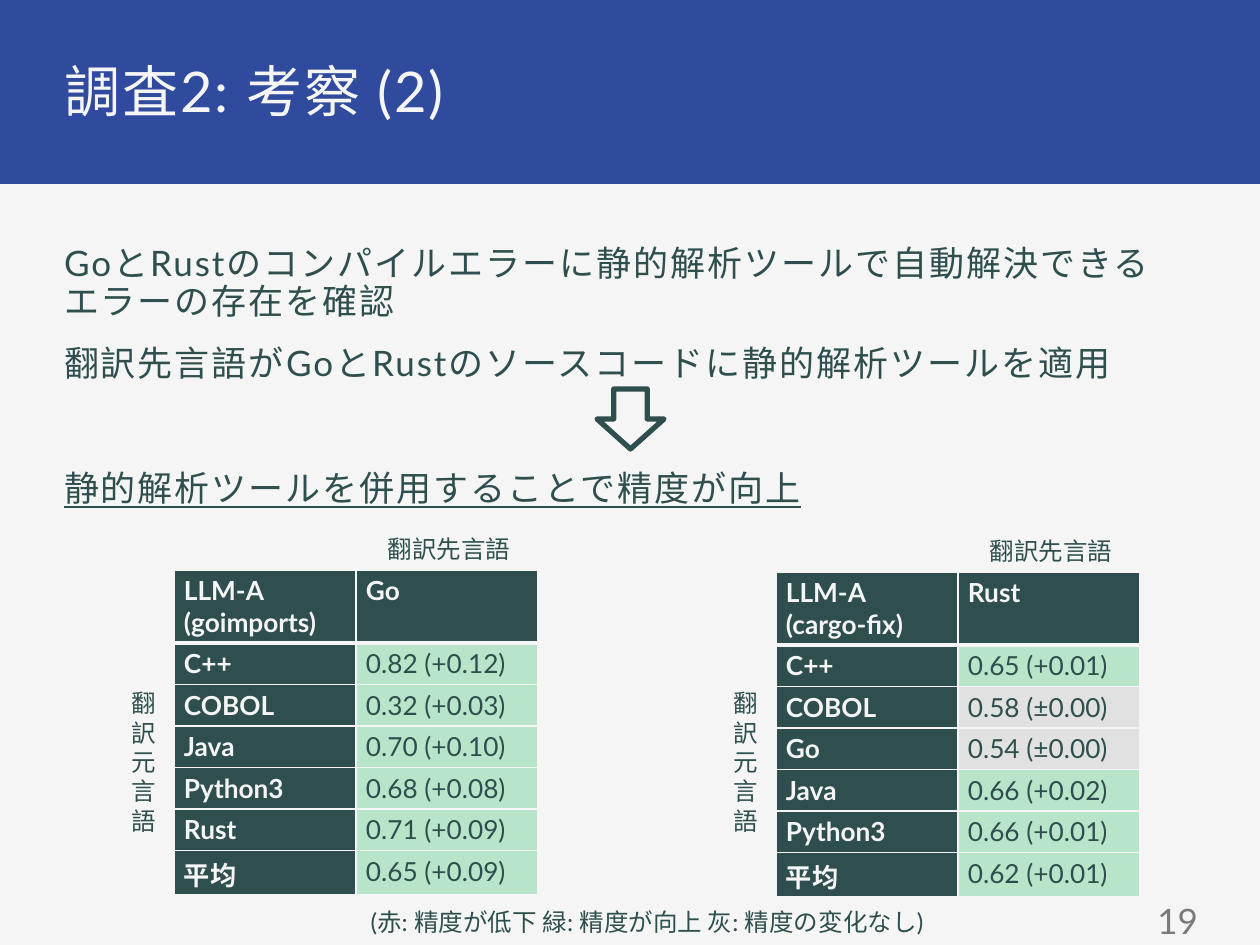
from lxml import etree
from pptx import Presentation
from pptx.dml.color import RGBColor
from pptx.enum.shapes import MSO_SHAPE
from pptx.enum.text import MSO_ANCHOR, MSO_AUTO_SIZE, PP_ALIGN
from pptx.oxml.ns import qn
from pptx.util import Emu, Pt

EMU_PER_PX = 914400 // 126
FONT = "Lato"
BLUE, PALE, DARK = "304A9E", "F5F5F5", "2F4F4F"
GREEN, GREY, PAGE_GREY = "B8E4C9", "E1E1E1", "7A7A7A"
LEFT, CENTER, RIGHT, JUSTIFY = PP_ALIGN.LEFT, PP_ALIGN.CENTER, PP_ALIGN.RIGHT, PP_ALIGN.JUSTIFY
TOP, MIDDLE = MSO_ANCHOR.TOP, MSO_ANCHOR.MIDDLE
NO_AUTOFIT = MSO_AUTO_SIZE.NONE
RECTANGLE, DOWN_ARROW = MSO_SHAPE.RECTANGLE, MSO_SHAPE.DOWN_ARROW

TITLE = "調査2: 考察 (2)"
POINTS = [
    ("GoとRustのコンパイルエラーに静的解析ツールで自動解決できる\nエラーの存在を確認", 14, False),
    ("翻訳先言語がGoとRustのソースコードに静的解析ツールを適用", 14, False),
    ("静的解析ツールを併用することで精度が向上", 50, True),
]
GO_ROWS = [
    ("LLM-A\n(goimports)", "Go"),
    ("C++", "0.82 (+0.12)"),
    ("COBOL", "0.32 (+0.03)"),
    ("Java", "0.70 (+0.10)"),
    ("Python3", "0.68 (+0.08)"),
    ("Rust", "0.71 (+0.09)"),
    ("平均", "0.65 (+0.09)"),
]
RUST_ROWS = [
    ("LLM-A\n(cargo-fix)", "Rust"),
    ("C++", "0.65 (+0.01)"),
    ("COBOL", "0.58 (±0.00)"),
    ("Go", "0.54 (±0.00)"),
    ("Java", "0.66 (+0.02)"),
    ("Python3", "0.66 (+0.01)"),
    ("平均", "0.62 (+0.01)"),
]
ROW_HEIGHTS = [70, 41, 41, 41, 41, 41, 44]


def px(length):
    """Turn pixels into EMU."""
    return Emu(length * EMU_PER_PX)


def color(code):
    """Turn a hex string into a colour."""
    return RGBColor.from_string(code)


def set_font(para, size, code, bold=False):
    """Set the font of a whole paragraph."""
    para.font.name = FONT
    para.font.size = Pt(size)
    para.font.bold = bold
    para.font.color.rgb = color(code)


def set_margins(target, across, down):
    """Set equal side margins and equal top and bottom margins."""
    target.margin_left = target.margin_right = px(across)
    target.margin_top = target.margin_bottom = px(down)


def place(shape, left, top, width, height):
    """Move and size a placeholder, and fix its text frame."""
    shape.left, shape.top, shape.width, shape.height = map(px, (left, top, width, height))
    frame = shape.text_frame
    frame.word_wrap = True
    frame.auto_size = NO_AUTOFIT
    frame.vertical_anchor = TOP
    return frame


def space_text(para, before):
    """Set the line and letter spacing that title and body share."""
    para.line_spacing = 0.9
    para.space_before = Pt(before)
    para._p.pPr.defRPr.set("spc", "110")


def fill_title(shape):
    """Write the slide title."""
    frame = place(shape, 54, 54, 1150, 74)
    set_margins(frame, 10, 10)
    para = frame.paragraphs[0]
    para.text = TITLE
    para.alignment = JUSTIFY
    set_font(para, 32, PALE)
    space_text(para, 16)


def fill_body(shape):
    """Write the unbulleted points."""
    frame = place(shape, 54, 238, 1150, 653)
    set_margins(frame, 10, 8)
    for number, (text, before, underline) in enumerate(POINTS):
        para = frame.add_paragraph() if number else frame.paragraphs[0]
        para.text = text
        properties = para._p.get_or_add_pPr()
        properties.set("marL", "0")
        properties.set("indent", "0")
        etree.SubElement(properties, qn("a:buNone"))
        set_font(para, 20, DARK)
        para.font.underline = underline
        space_text(para, before)


def add_label(slide, text, left, top, width, height, align=CENTER, size=14, code=DARK, anchor=TOP):
    """Add a one-paragraph text box."""
    box = slide.shapes.add_textbox(*map(px, (left, top, width, height)))
    frame = box.text_frame
    frame.word_wrap = True
    frame.vertical_anchor = anchor
    para = frame.paragraphs[0]
    para.text = text
    para.alignment = align
    set_font(para, size, code)
    return frame


def add_shape(slide, kind, left, top, width, height):
    """Add a preset shape without a shadow."""
    shape = slide.shapes.add_shape(kind, *map(px, (left, top, width, height)))
    shape.shadow.inherit = False
    return shape


def add_band(slide):
    """Add the title band behind everything else."""
    band = add_shape(slide, RECTANGLE, -2, -2, 1265, 186)
    band.fill.solid()
    band.fill.fore_color.rgb = color(BLUE)
    band.line.fill.background()
    slide.shapes._spTree.insert(2, band._element)


def add_arrow(slide):
    """Add the outlined arrow that leads to the conclusion."""
    arrow = add_shape(slide, DOWN_ARROW, 597, 389, 67, 60)
    arrow.fill.background()
    arrow.line.color.rgb = color(DARK)
    arrow.line.width = Pt(3)


def set_borders(cell, widths):
    """Draw pale borders, with widths in points by side."""
    properties = cell._tc.get_or_add_tcPr()
    for place_in_order, (side, width) in enumerate(widths.items()):
        line = etree.Element(qn(f"a:ln{side}"), w=str(Pt(width)))
        fill = etree.SubElement(line, qn("a:solidFill"))
        etree.SubElement(fill, qn("a:srgbClr"), val=PALE)
        properties.insert(place_in_order, line)


def fill_cell(cell, text, back, code, bold, widths):
    """Write and format one table cell."""
    cell.text = text
    set_margins(cell, 10, 5)
    cell.fill.solid()
    cell.fill.fore_color.rgb = color(back)
    for para in cell.text_frame.paragraphs:
        set_font(para, 15, code, bold)
    set_borders(cell, widths)


def add_scores(slide, rows, left, top):
    """Add a score table with its two axis labels."""
    frame = slide.shapes.add_table(len(rows), 2, px(left), px(top), px(364), px(sum(ROW_HEIGHTS)))
    table = frame.table
    for column in table.columns:
        column.width = px(182)
    for r, texts in enumerate(rows):
        table.rows[r].height = px(ROW_HEIGHTS[r])
        widths = {"L": 1, "R": 1, "T": 3 if r == 1 else 1, "B": 3 if r == 0 else 1}
        for c, text in enumerate(texts):
            heading = r == 0 or c == 0
            score_back = GREY if "±" in text else GREEN
            back, code = (DARK, PALE) if heading else (score_back, DARK)
            fill_cell(table.cell(r, c), text, back, code, heading, widths)
    add_label(slide, "翻訳元言語", left - 55, 682, 55, 161, LEFT)
    add_label(slide, "翻訳先言語", left + 186, top - 42, 178, 43)


def main():
    """Build the slide and save it."""
    deck = Presentation()
    deck.slide_width, deck.slide_height = px(1260), px(945)
    slide = deck.slides.add_slide(deck.slide_layouts[1])
    slide.background.fill.solid()
    slide.background.fill.fore_color.rgb = color(PALE)
    add_band(slide)
    fill_title(slide.shapes.title)
    fill_body(slide.placeholders[1])
    page = add_label(slide, "19", 922, 896, 284, 49, RIGHT, 20, PAGE_GREY, MIDDLE)
    set_margins(page, 8, 8)
    add_scores(slide, GO_ROWS, 174, 570)
    add_scores(slide, RUST_ROWS, 776, 572)
    add_label(slide, "(赤: 精度が低下 緑: 精度が向上 灰: 精度の変化なし)", 253, 901, 788, 43)
    add_arrow(slide)
    deck.save("out.pptx")


if __name__ == "__main__":
    main()
